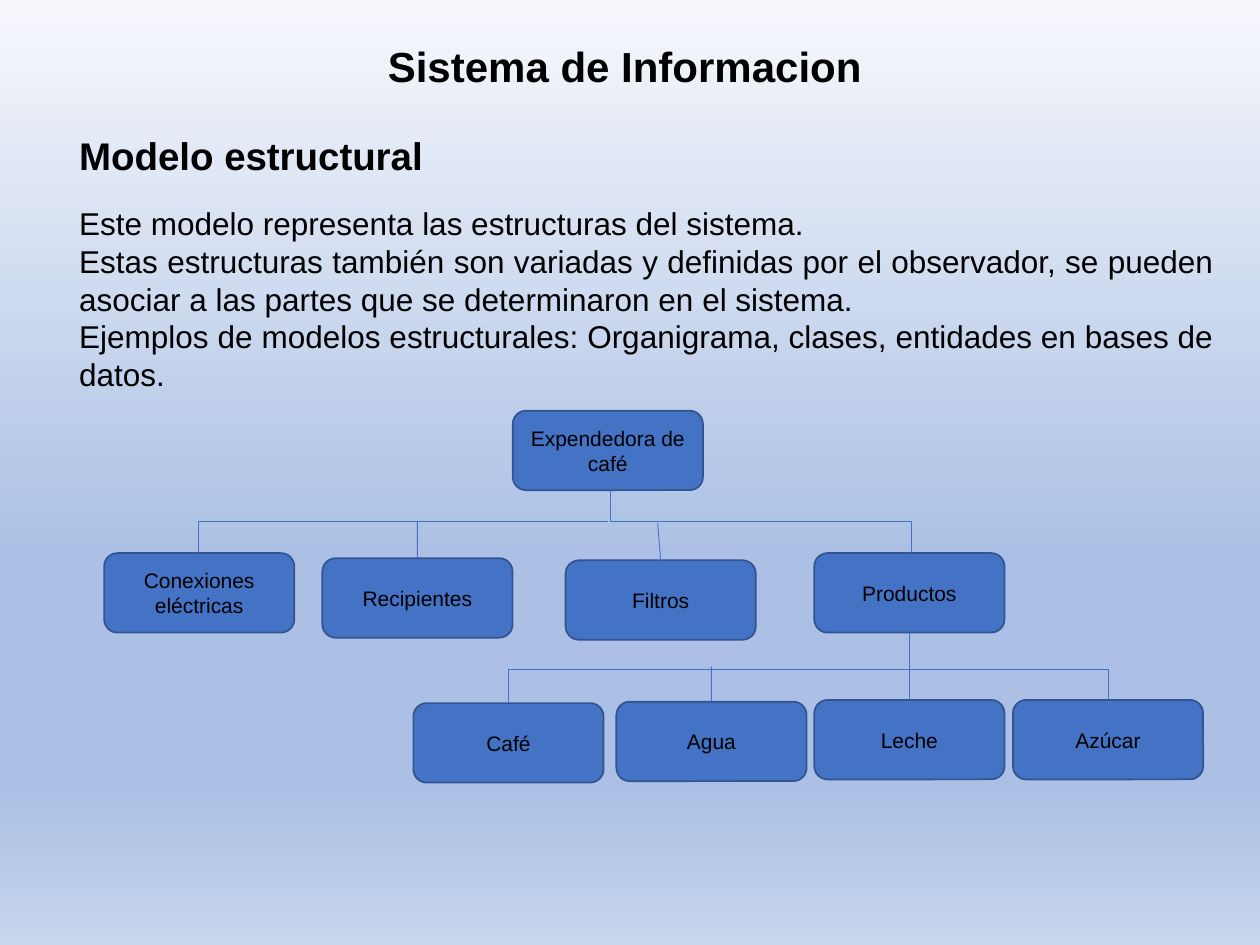
from lxml import etree
from pptx import Presentation
from pptx.dml.color import RGBColor
from pptx.enum.shapes import MSO_CONNECTOR, MSO_SHAPE
from pptx.enum.text import MSO_ANCHOR, MSO_AUTO_SIZE, PP_ALIGN
from pptx.oxml.ns import qn
from pptx.util import Pt

LEFT, CENTER, FULL = PP_ALIGN.LEFT, PP_ALIGN.CENTER, PP_ALIGN.JUSTIFY
TOP, MIDDLE = MSO_ANCHOR.TOP, MSO_ANCHOR.MIDDLE
LINE, ELBOW = MSO_CONNECTOR.STRAIGHT, MSO_CONNECTOR.ELBOW
ROUND = MSO_SHAPE.ROUNDED_RECTANGLE
FONT = "Arial"
COLORS = {"text": "000000", "node": "4472C4", "edge": "325491"}
SKY = [(0, "F6F8FC"), (59, "ABC0E4"), (83, "ABC0E4"), (100, "C7D5ED")]
NODE_W, NODE_H = 108.7, 45.4

# Name, left and top of each node
NODES = [
    ("Expendedora de café", 293, 234.7),
    ("Conexiones eléctricas", 59.5, 316.1),
    ("Recipientes", 184.2, 319),
    ("Filtros", 323.2, 320.2),
    ("Productos", 465.3, 316.1),
    ("Café", 236.2, 401.8),
    ("Agua", 352.2, 401),
    ("Leche", 465.3, 400),
    ("Azúcar", 578.8, 400),
]
BODY = [
    "Este modelo representa las estructuras del sistema. ",
    "Estas estructuras también son variadas y definidas por el observador, "
    "se pueden asociar a las partes que se determinaron en el sistema. ",
    "Ejemplos de modelos estructurales: Organigrama, clases, entidades "
    "en bases de datos. ",
]


def color(name):
    return RGBColor.from_string(COLORS[name])


def paint_back(slide):
    fill = slide.background.fill
    fill.gradient()
    fill.gradient_angle = 270
    stops = next(slide.element.iter(qn("a:gsLst")))
    for old in list(stops):
        stops.remove(old)
    for pos, tone in SKY:
        stop = etree.SubElement(stops, qn("a:gs"), pos=str(pos * 1000))
        etree.SubElement(stop, qn("a:srgbClr"), val=tone)


def write(shape, *lines, size=12, bold=False, align=LEFT, anchor=TOP):
    frame = shape.text_frame
    frame.word_wrap = True
    frame.auto_size = MSO_AUTO_SIZE.NONE
    frame.vertical_anchor = anchor
    for i, line in enumerate(lines):
        para = frame.add_paragraph() if i else frame.paragraphs[0]
        para.alignment = align
        run = para.add_run()
        run.text = line
        font = run.font
        font.name, font.size, font.bold = FONT, Pt(size), bold
        font.color.rgb = color("text")


def add_title(slide, line):
    title = slide.shapes.title
    title.left, title.top = Pt(187.9), Pt(23)
    title.width, title.height = Pt(344.9), Pt(43.2)
    write(title, line, size=24, bold=True, align=CENTER)
    para = title.text_frame.paragraphs[0]
    para.line_spacing, para.space_before = 0.9, Pt(10)


def add_text(slide, x, y, w, h, *lines, **style):
    box = slide.shapes.add_textbox(Pt(x), Pt(y), Pt(w), Pt(h))
    write(box, *lines, **style)


def add_node(slide, name, x, y):
    node = slide.shapes.add_shape(ROUND, Pt(x), Pt(y), Pt(NODE_W), Pt(NODE_H))
    node.shadow.inherit = False
    node.fill.solid()
    node.fill.fore_color.rgb = color("node")
    node.line.color.rgb = color("edge")
    node.line.width = Pt(1)
    write(node, name, align=CENTER, anchor=MIDDLE)
    return node


def add_link(slide, x1, y1, x2, y2, kind=LINE):
    link = slide.shapes.add_connector(kind, Pt(x1), Pt(y1), Pt(x2), Pt(y2))
    link.line.color.rgb = color("node")
    link.line.width = Pt(0.5)
    etree.SubElement(link.element.spPr, qn("a:effectLst"))
    return link


def bend(link, ratio):
    """Set where the elbow turns, as a share of its length."""
    shape = link.element.spPr.find(qn("a:prstGeom"))
    guides = shape.find(qn("a:avLst"))
    if guides is None:
        guides = etree.SubElement(shape, qn("a:avLst"))
    etree.SubElement(guides, qn("a:gd"), name="adj1",
                     fmla=f"val {round(ratio * 100000)}")


def add_fork(slide, x1, y1, x2, y2, ratio=0.5):
    """Elbow to the right that leaves and arrives vertically."""
    run, rise = x2 - x1, abs(y2 - y1)
    mid_x, mid_y = (x1 + x2) / 2, (y1 + y2) / 2
    left, top = mid_x - rise / 2, mid_y - run / 2
    link = add_link(slide, left, top, left + rise, top + run, ELBOW)
    frame = link.element.spPr.find(qn("a:xfrm"))
    down = y2 > y1
    frame.set("rot", str((270 if down else 90) * 60000))
    frame.set("flipH", "1")
    if not down:
        frame.set("flipV", "1")
    bend(link, ratio)


def main():
    deck = Presentation()
    deck.slide_width, deck.slide_height = Pt(720), Pt(540)
    slide = deck.slides.add_slide(deck.slide_layouts[5])
    paint_back(slide)

    # Heading and text
    add_title(slide, "Sistema de Informacion ")
    add_text(slide, 38.2, 72, 571.7, 33.8, "Modelo estructural",
             size=22, bold=True)
    add_text(slide, 38.2, 113, 662.4, 116.6, *BODY, size=18, align=FULL)

    # Tree nodes
    nodes = {name: add_node(slide, name, x, y) for name, x, y in NODES}

    # Elbows of both levels
    add_fork(slide, 348.5, 280.1, 520.6, 316.1)
    side = add_link(slide, 347.4, 298, 113.5, 316.1, ELBOW)
    bend(side, 1)
    add_fork(slide, 290.5, 401.8, 633.2, 400, 10.7)

    # Straight drops
    for name, x, y in [("Recipientes", 238.5, 298), ("Filtros", 375.8, 299),
                       ("Agua", 406.5, 381)]:
        add_link(slide, x, y, x, y + 20).end_connect(nodes[name], 0)
    stem = add_link(slide, 519.7, 361.5, 519.7, 400)
    stem.begin_connect(nodes["Productos"], 2)
    stem.end_connect(nodes["Leche"], 0)

    deck.save("out.pptx")


if __name__ == "__main__":
    main()
